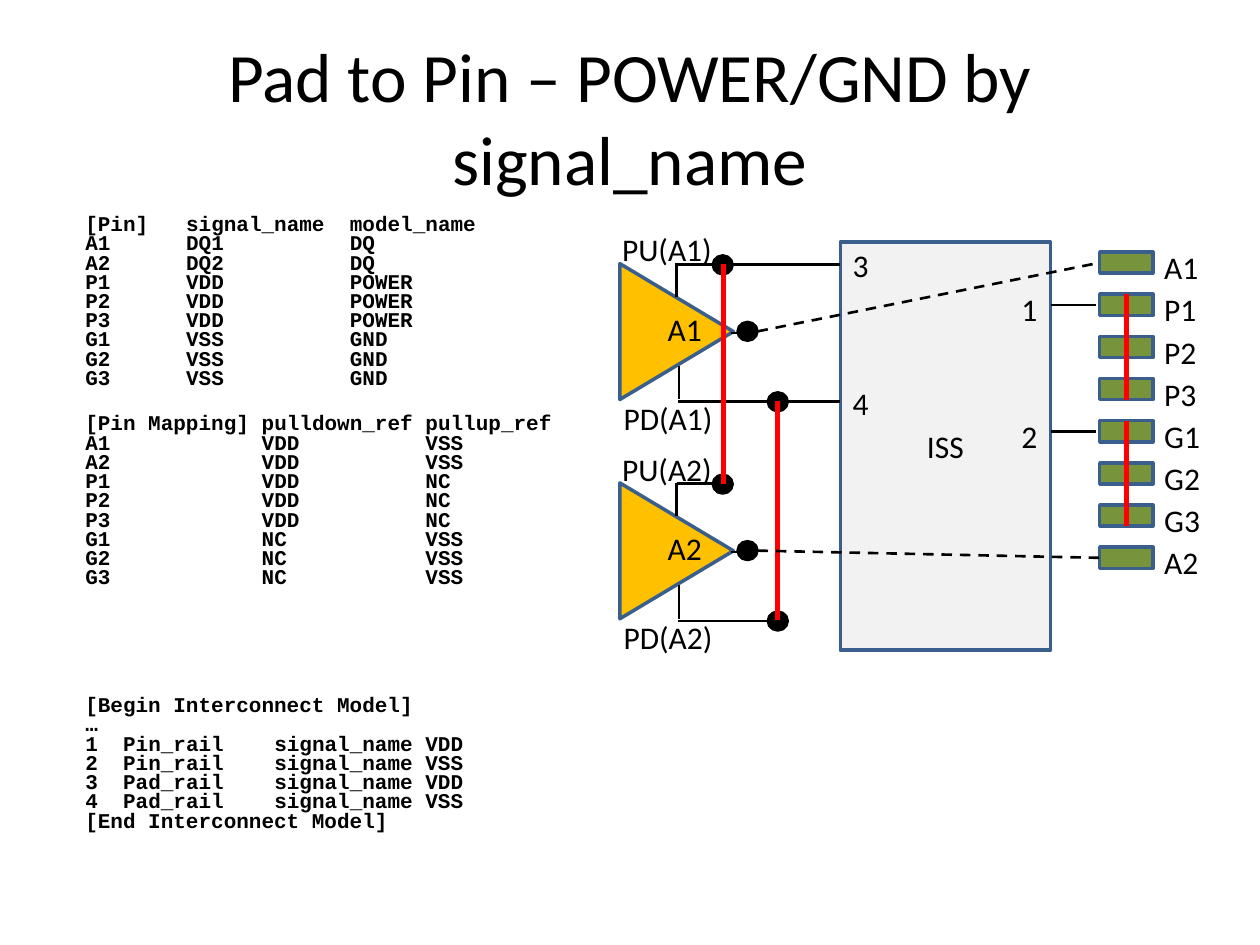
"""Build a slide on pad-to-pin POWER/GND connections by signal_name."""
import pptx
import pptx.util
import pptx.dml.color
import pptx.enum.dml
import pptx.enum.shapes
import pptx.enum.text
import pptx.oxml
import pptx.oxml.ns

Cm, Pt = pptx.util.Cm, pptx.util.Pt
RGBColor = pptx.dml.color.RGBColor
SHAPE = pptx.enum.shapes.MSO_SHAPE
ALIGN = pptx.enum.text.PP_ALIGN
ANCHOR = pptx.enum.text.MSO_ANCHOR

BLACK = RGBColor(0x00, 0x00, 0x00)
RED = RGBColor(0xFF, 0x00, 0x00)
GRAY = RGBColor(0xF2, 0xF2, 0xF2)
AMBER = RGBColor(0xFF, 0xC0, 0x00)
GREEN = RGBColor(0x77, 0x93, 0x3C)
BLUE = RGBColor(0x3A, 0x5F, 0x8C)

CHARACTER_WIDTH = Pt(7.2)
BUFFER_PITCH = 4.42
PIN_TOP, PIN_PITCH = 5.08, 0.85
LABEL_HEIGHT = 1.02
PINS = ["A1", "P1", "P2", "P3", "G1", "G2", "G3", "A2"]

PIN_ROWS = [
    "[Pin]\tsignal_name\tmodel_name",
    "A1\tDQ1\tDQ", "A2\tDQ2\tDQ",
    "P1\tVDD\tPOWER", "P2\tVDD\tPOWER", "P3\tVDD\tPOWER",
    "G1\tVSS\tGND", "G2\tVSS\tGND", "G3\tVSS\tGND",
]
MAPPING_ROWS = [
    "[Pin Mapping]\tpulldown_ref\tpullup_ref",
    "A1\tVDD\tVSS", "A2\tVDD\tVSS",
    "P1\tVDD\tNC", "P2\tVDD\tNC", "P3\tVDD\tNC",
    "G1\tNC\tVSS", "G2\tNC\tVSS", "G3\tNC\tVSS",
]
MODEL_ROWS = [
    "[Begin Interconnect Model]", "…",
    "1\tPin_rail\tsignal_name VDD", "2\tPin_rail\tsignal_name VSS",
    "3\tPad_rail\tsignal_name VDD", "4\tPad_rail\tsignal_name VSS",
    "[End Interconnect Model]",
]


class Sketch:
    """Hold the text style and the current slide, and draw each kind of element."""

    def __init__(self, page, face="Calibri", size=18):
        self.page = page
        self.face = face
        self.size = size

    def style(self, para, size=None, face=None, bold=False):
        """Set the font of a whole paragraph."""
        para.font.name = face or self.face
        para.font.size = Pt(size or self.size)
        para.font.bold = bold
        para.font.color.rgb = BLACK

    def label(self, text, left, top, width, height=LABEL_HEIGHT, align=ALIGN.LEFT,
              size=None, anchor=ANCHOR.TOP, wrap=False):
        """Add one paragraph of text."""
        box = self.page.shapes.add_textbox(Cm(left), Cm(top), Cm(width), Cm(height))
        box.text_frame.word_wrap = wrap
        box.text_frame.vertical_anchor = anchor
        para = box.text_frame.paragraphs[0]
        para.text = text
        para.alignment = align
        self.style(para, size)

    def listing(self, rows, columns, top, height):
        """Add monospaced rows with tab stops at the given character columns."""
        box = self.page.shapes.add_textbox(Cm(1.47), Cm(top), Cm(10.36), Cm(height))
        box.text_frame.word_wrap = True
        for index, row in enumerate(rows):
            para = box.text_frame.paragraphs[0] if index == 0 else box.text_frame.add_paragraph()
            para.text = row
            para.line_spacing = Pt(11)
            tabs = pptx.oxml.parse_xml(f"<a:tabLst {pptx.oxml.ns.nsdecls('a')}/>")
            for column in columns:
                stop = tabs.makeelement(pptx.oxml.ns.qn("a:tab"),
                                        {"pos": str(column * CHARACTER_WIDTH), "algn": "l"})
                tabs.append(stop)
            para._p.get_or_add_pPr().append(tabs)
            self.style(para, 12, "Courier New", True)

    def shape(self, kind, left, top, width, height, fill, line=BLUE, text="", rotation=0):
        """Add a filled and outlined preset shape."""
        shape = self.page.shapes.add_shape(kind, Cm(left), Cm(top), Cm(width), Cm(height))
        shape.shadow.inherit = False
        shape.rotation = rotation
        shape.fill.solid()
        shape.fill.fore_color.rgb = fill
        shape.line.color.rgb = line
        shape.line.width = Pt(2)
        if text:
            para = shape.text_frame.paragraphs[0]
            para.text = text
            para.alignment = ALIGN.CENTER
            self.style(para)
        return shape

    def wire(self, x1, y1, x2, y2, color=BLACK, width=1.5, dashed=False):
        """Add a straight connector without a shadow."""
        wire = self.page.shapes.add_connector(
            pptx.enum.shapes.MSO_CONNECTOR.STRAIGHT, Cm(x1), Cm(y1), Cm(x2), Cm(y2))
        wire.line.color.rgb = color
        wire.line.width = Pt(width)
        if dashed:
            wire.line.dash_style = pptx.enum.dml.MSO_LINE.DASH
        properties = wire._element.spPr
        properties.append(properties.makeelement(pptx.oxml.ns.qn("a:effectLst"), {}))
        return wire

    def buffer(self, name, shift):
        """Add a buffer with its pull-up, pull-down and output pads."""
        self.shape(SHAPE.ISOSCELES_TRIANGLE, 12.27, 5.54 + shift, 2.74, 2.29, AMBER, rotation=90)
        for x1, y1, x2, y2 in [(13.64, 5.31, 13.64, 5.99), (13.64, 5.33, 14.38, 5.33),
                               (13.69, 7.37, 13.69, 8.05), (13.67, 8.1, 15.49, 8.1),
                               (14.73, 6.71, 15.04, 6.71)]:
            self.wire(x1, y1 + shift, x2, y2 + shift)
        for left, top in [(14.38, 5.16), (14.88, 6.5), (15.49, 7.92)]:
            self.shape(SHAPE.OVAL, left, top + shift, 0.38, 0.36, BLACK, BLACK)
        self.label(f"PU({name})", 12.29, 4.52 + shift, 2.34)
        self.label(f"PD({name})", 12.32, 7.92 + shift, 2.34)
        self.label(name, 13.21, 6.12 + shift, 1.22)


def main():
    """Draw the slide and save it."""
    deck = pptx.Presentation()
    deck.slide_width, deck.slide_height = Cm(25.4), Cm(19.05)
    sketch = Sketch(deck.slides.add_slide(deck.slide_layouts[6]))

    sketch.label("Pad to Pin – POWER/GND by signal_name", 1.27, 0.76, 22.86, 3.18,
                 ALIGN.CENTER, 39.6, ANCHOR.MIDDLE, True)
    sketch.listing(PIN_ROWS, [8, 21], 4.24, 3.78)
    sketch.listing(MAPPING_ROWS, [14, 27], 8.26, 3.78)
    sketch.listing(MODEL_ROWS, [3, 15], 13.94, 3)

    sketch.shape(SHAPE.RECTANGLE, 16.94, 4.88, 4.24, 8.23, GRAY, text="ISS")
    for text, top in [("3", 4.83), ("4", 7.62)]:
        sketch.label(text, 16.94, top, 0.84)
    sketch.wire(14.68, 5.33, 16.94, 5.33)
    sketch.wire(15.75, 8.1, 16.94, 8.1)

    for index, name in enumerate(["A1", "A2"]):
        sketch.buffer(name, index * BUFFER_PITCH)
    for x, y in [(14.58, 5.33), (15.67, 8.08)]:
        sketch.wire(x, y, x, y + BUFFER_PITCH, RED, 3)

    pins = {}
    for index, name in enumerate(PINS):
        shift = index * PIN_PITCH
        pins[name] = sketch.shape(SHAPE.RECTANGLE, 22.17, PIN_TOP + shift, 1.07, 0.43, GREEN)
        sketch.label(name, 23.22, 4.88 + shift, 1.27)
    for text, name in [("1", "P1"), ("2", "G1")]:
        shift = PINS.index(name) * PIN_PITCH
        sketch.label(text, 19.89, 4.88 + shift, 1.27, align=ALIGN.RIGHT, wrap=True)
        sketch.wire(21.18, 5.3 + shift, 22.1, 5.3 + shift)

    for index, name in enumerate(["A1", "A2"]):
        y = 6.68 + index * BUFFER_PITCH
        sketch.wire(15.27, y, 22.17, y, dashed=True).end_connect(pins[name], 1)
    for first, last in [("P1", "P3"), ("G1", "G3")]:
        rail = sketch.wire(22.7, PIN_TOP, 22.7, PIN_TOP, RED, 3)
        rail.begin_connect(pins[first], 0)
        rail.end_connect(pins[last], 2)

    deck.save("out.pptx")


if __name__ == "__main__":
    main()
